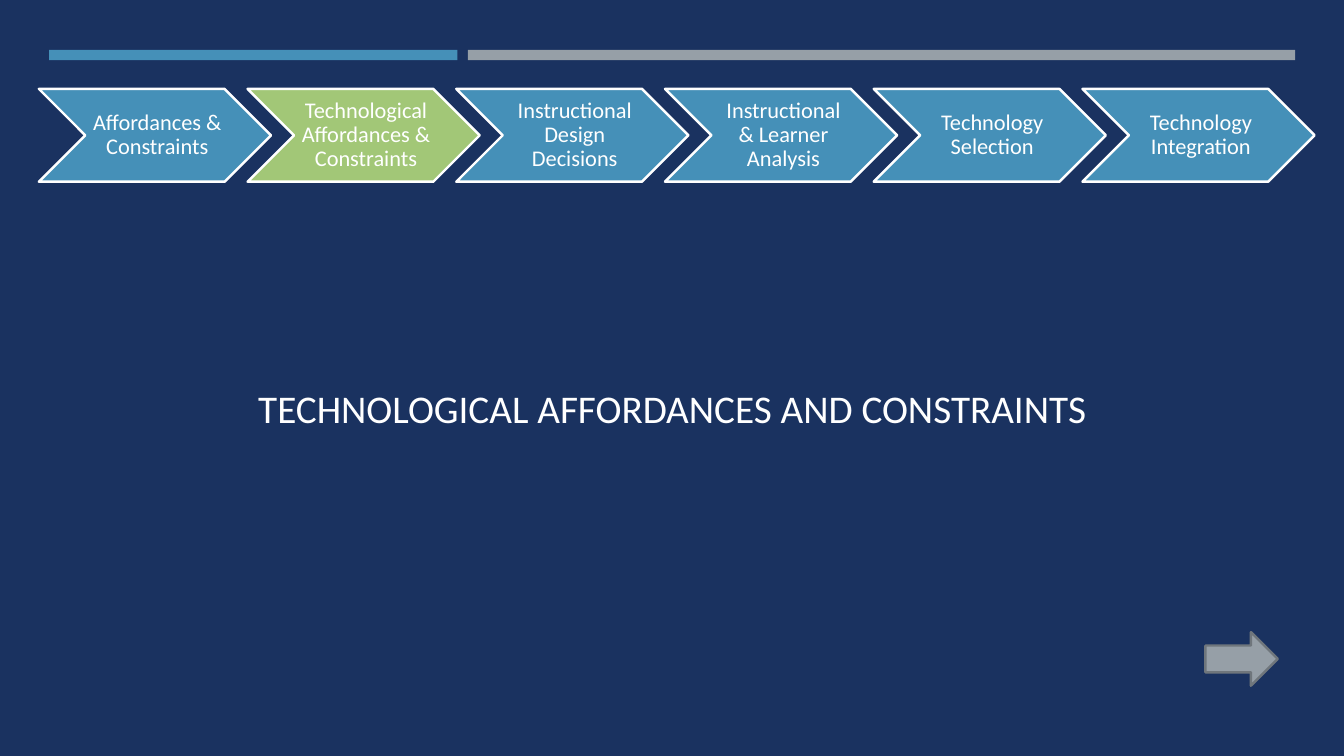
from pptx import Presentation
from pptx.dml.color import RGBColor
from pptx.enum.shapes import MSO_SHAPE
from pptx.enum.text import MSO_ANCHOR, PP_ALIGN
from pptx.util import Cm, Pt

NAVY, BLUE, GREEN = "1A3260", "4590B8", "A2C777"
GRAY, DARK_GRAY, WHITE = "969FA7", "6F767C", "FFFFFF"
SLIDE_WIDTH, SLIDE_HEIGHT = 33.87, 19.05

STEPS = [
    "Affordances & Constraints",
    "Technological Affordances & Constraints",
    "Instructional Design Decisions",
    "Instructional & Learner Analysis",
    "Technology Selection",
    "Technology Integration",
]
CURRENT_STEP = 1
STEP_LEFT, STEP_TOP, STEP_PITCH = 0.98, 2.24, 5.26
STEP_WIDTH, STEP_HEIGHT = 5.85, 2.34


def color(value):
    return RGBColor.from_string(value)


def write_text(shape, text, size=16, font="Calibri", font_color=WHITE,
               line_spacing=None, margins=(0.25, 0.13, 0.25, 0.13)):
    frame = shape.text_frame
    frame.word_wrap = True
    frame.vertical_anchor = MSO_ANCHOR.MIDDLE
    (frame.margin_left, frame.margin_top,
     frame.margin_right, frame.margin_bottom) = map(Cm, margins)
    paragraph = frame.paragraphs[0]
    paragraph.alignment = PP_ALIGN.CENTER
    if line_spacing:
        paragraph.line_spacing = line_spacing
    run = paragraph.add_run()
    run.text = text
    run.font.name = font
    run.font.size = Pt(size)
    run.font.color.rgb = color(font_color)


class SlideBuilder:
    line_width = Pt(1.75)

    def __init__(self, slide):
        self.slide = slide

    def shape(self, kind, left, top, width, height, fill, line=None, group=None):
        shapes = group.shapes if group else self.slide.shapes
        shape = shapes.add_shape(kind, Cm(left), Cm(top), Cm(width), Cm(height))
        shape.shadow.inherit = False
        shape.fill.solid()
        shape.fill.fore_color.rgb = color(fill)
        if line:
            shape.line.color.rgb = color(line)
            shape.line.width = self.line_width
        else:
            shape.line.fill.background()
        return shape

    def bar(self, left, top, width, height, fill):
        return self.shape(MSO_SHAPE.RECTANGLE, left, top, width, height, fill)

    def title(self, text, left, top, width, height):
        box = self.slide.shapes.add_textbox(Cm(left), Cm(top), Cm(width), Cm(height))
        write_text(box, text, size=28)

    def process(self, steps, current):
        group = self.slide.shapes.add_group_shape()
        for index, step in enumerate(steps):
            chevron = self.shape(
                MSO_SHAPE.CHEVRON, STEP_LEFT + index * STEP_PITCH, STEP_TOP,
                STEP_WIDTH, STEP_HEIGHT, GREEN if index == current else BLUE,
                line=WHITE, group=group)
            write_text(chevron, step, line_spacing=0.9,
                       margins=(0.17, 0.05, 0.05, 0.05))


def main():
    presentation = Presentation()
    presentation.slide_width = Cm(SLIDE_WIDTH)
    presentation.slide_height = Cm(SLIDE_HEIGHT)
    builder = SlideBuilder(presentation.slides.add_slide(presentation.slide_layouts[6]))

    # Backdrop and title
    builder.bar(0, 0, SLIDE_WIDTH, SLIDE_HEIGHT, NAVY)
    builder.title("TECHNOLOGICAL AFFORDANCES AND CONSTRAINTS", 0.97, 3.4, 31.93, 13.74)

    # Accent bars
    builder.bar(1.24, 1.26, 10.29, 0.26, BLUE)
    builder.bar(11.79, 1.26, 20.85, 0.26, GRAY)

    # Next arrow
    builder.shape(MSO_SHAPE.RIGHT_ARROW, 30.38, 15.93, 1.82, 1.35, GRAY, line=DARK_GRAY)

    # Process steps
    builder.process(STEPS, CURRENT_STEP)

    presentation.save("out.pptx")


if __name__ == "__main__":
    main()
